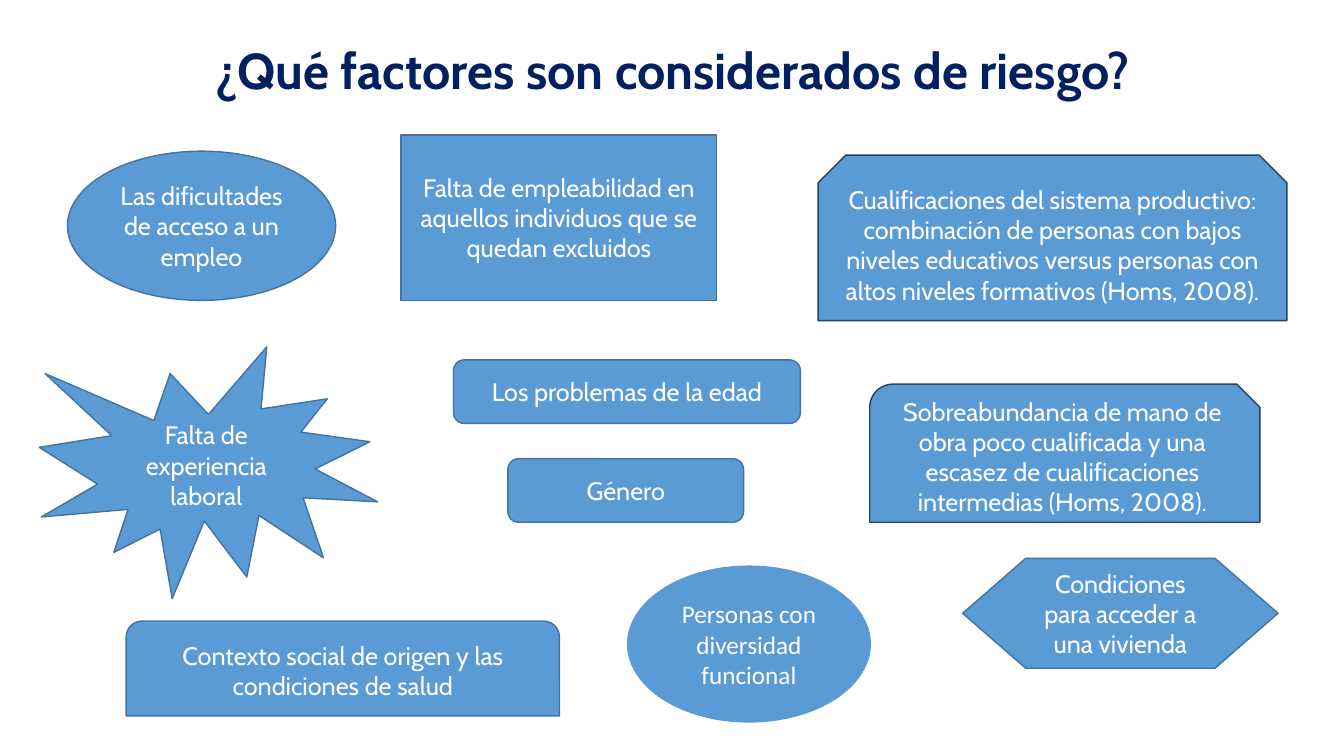
from dataclasses import dataclass
from typing import Optional

import pptx
import pptx.dml.color
import pptx.enum.shapes
import pptx.enum.text
import pptx.util

Cm = pptx.util.Cm
Pt = pptx.util.Pt
RGBColor = pptx.dml.color.RGBColor
Preset = pptx.enum.shapes.MSO_SHAPE

NAVY = RGBColor(0x00, 0x20, 0x60)
BLUE = RGBColor(0x5B, 0x9B, 0xD5)
EDGE = RGBColor(0x43, 0x73, 0x9E)
DARK_EDGE = RGBColor(0x28, 0x44, 0x5D)
WHITE = RGBColor(0xFF, 0xFF, 0xFF)


@dataclass(frozen=True)
class Factor:
    """A risk factor in its shape; lengths in centimetres."""
    text: str
    preset: Preset
    left: float
    top: float
    width: float
    height: float
    edge: Optional[RGBColor] = EDGE
    font: str = "Cabin"


FACTORS = [
    Factor("Las dificultades de acceso a un empleo",
           Preset.OVAL, 1.7, 3.81, 6.76, 3.76),
    Factor("Falta de empleabilidad en aquellos individuos que se quedan excluidos",
           Preset.RECTANGLE, 10.11, 3.4, 7.95, 4.17),
    Factor("Personas con diversidad funcional",
           Preset.OVAL, 15.8, 14.25, 6.15, 3.96, edge=None, font="Calibri"),
    Factor("Falta de experiencia laboral",
           Preset.EXPLOSION1, 0.99, 8.74, 8.53, 6.35),
    Factor("Los problemas de la edad",
           Preset.ROUNDED_RECTANGLE, 11.43, 9.07, 8.74, 1.6),
    Factor("Contexto social de origen y las condiciones de salud",
           Preset.ROUND_2_SAME_RECTANGLE, 3.18, 15.65, 10.92, 2.39),
    Factor("Condiciones para acceder a una vivienda",
           Preset.FLOWCHART_PREPARATION, 24.26, 14.07, 7.95, 2.77),
    Factor("Sobreabundancia de mano de obra poco cualificada y una escasez de "
           "cualificaciones intermedias (Homs, 2008).",
           Preset.SNIP_ROUND_RECTANGLE, 21.92, 9.68, 9.83, 3.48, edge=DARK_EDGE),
    Factor("Cualificaciones del sistema productivo: combinación de personas con "
           "bajos niveles educativos versus personas con altos niveles "
           "formativos (Homs, 2008).",
           Preset.SNIP_2_SAME_RECTANGLE, 20.62, 3.91, 11.81, 4.17, edge=DARK_EDGE),
    Factor("Género",
           Preset.ROUNDED_RECTANGLE, 12.8, 11.56, 5.94, 1.6),
]


def write_text(box, text: str, *, size: float = 18, font: str = "Cabin",
               color: RGBColor = WHITE, bold: bool = False,
               spacing: float = 1.0) -> None:
    """Put centred text in the middle of a box."""
    frame = box.text_frame
    frame.word_wrap = True
    frame.vertical_anchor = pptx.enum.text.MSO_ANCHOR.MIDDLE
    para = frame.paragraphs[0]
    para.alignment = pptx.enum.text.PP_ALIGN.CENTER
    para.line_spacing = spacing
    span = para.add_run()
    span.text = text
    span.font.size = Pt(size)
    span.font.name = font
    span.font.bold = bold
    span.font.color.rgb = color


def draw_factor(page, factor: Factor) -> None:
    """Draw one filled shape with its text."""
    box = page.shapes.add_shape(factor.preset, Cm(factor.left), Cm(factor.top),
                                Cm(factor.width), Cm(factor.height))
    box.shadow.inherit = False
    box.fill.solid()
    box.fill.fore_color.rgb = BLUE
    if factor.edge is None:
        box.line.fill.background()
    else:
        box.line.color.rgb = factor.edge
        box.line.width = Pt(1)
    write_text(box, factor.text, font=factor.font)


def main() -> None:
    deck = pptx.Presentation()
    deck.slide_width, deck.slide_height = Cm(33.87), Cm(19.05)
    page = deck.slides.add_slide(deck.slide_layouts[6])

    # Title
    title = page.shapes.add_textbox(Cm(2.36), Cm(0), Cm(29.21), Cm(3.68))
    write_text(title, "¿Qué factores son considerados de riesgo?",
               size=36, color=NAVY, bold=True, spacing=0.9)

    # Risk factors
    for factor in FACTORS:
        draw_factor(page, factor)

    deck.save("out.pptx")


if __name__ == "__main__":
    main()
